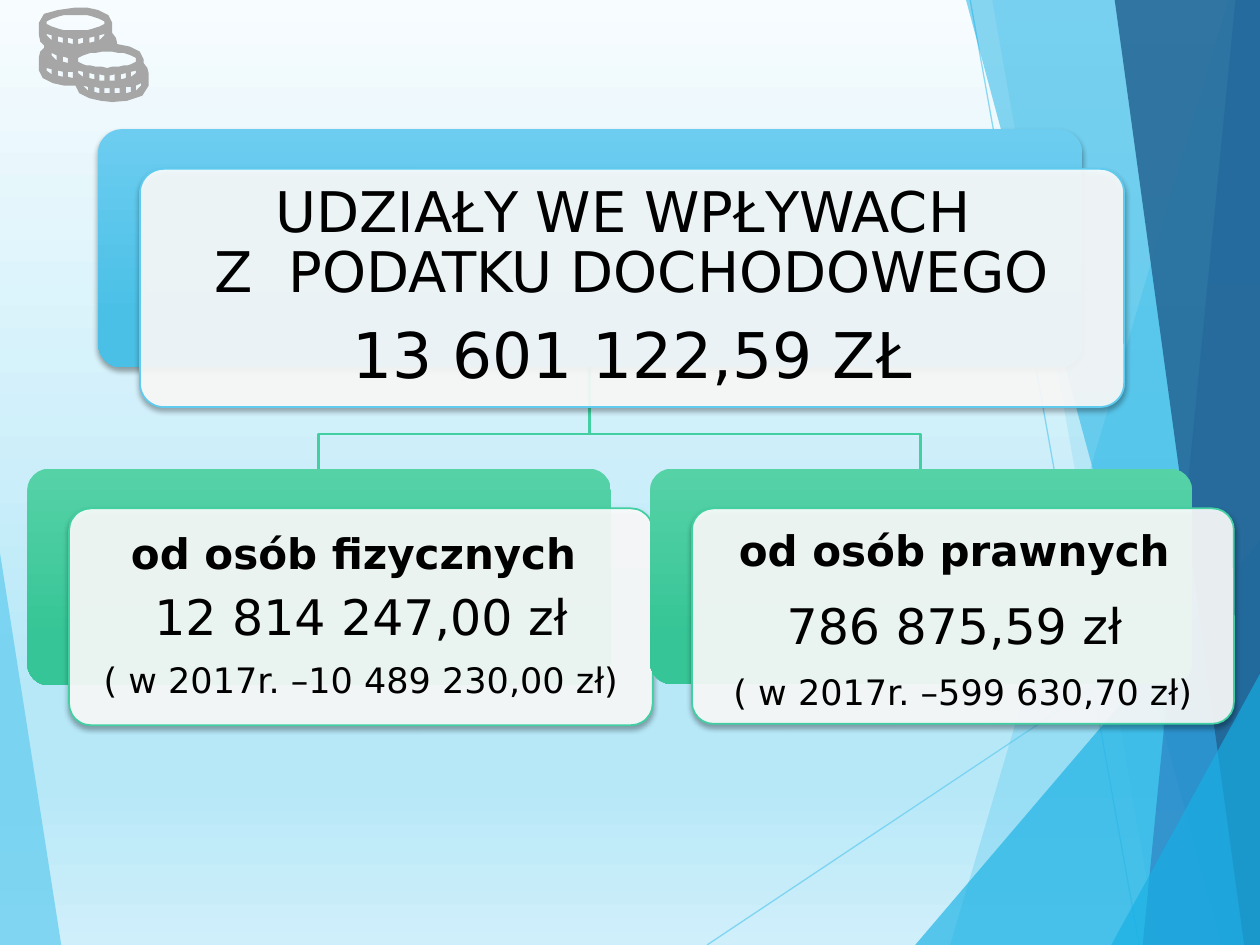
from math import cos, pi, sin

from lxml import etree
from pptx import Presentation
from pptx.dml.color import RGBColor
from pptx.enum.shapes import MSO_CONNECTOR, MSO_SHAPE
from pptx.enum.text import MSO_ANCHOR, MSO_AUTO_SIZE, PP_ALIGN
from pptx.oxml.ns import qn
from pptx.util import Pt

ROUNDED = MSO_SHAPE.ROUNDED_RECTANGLE
STRAIGHT = MSO_CONNECTOR.STRAIGHT
FONT = "DejaVu Sans"
WIDTH, HEIGHT = 720, 540

COLORS = {
    "sky": "5FCBEF", "azure": "17B0E4", "blue": "2E83C3", "navy": "226292",
    "green": "42D0A2", "white": "FFFFFF", "black": "000000", "grey": "A6A6A6",
}
BACKGROUND = [(0, "F7FCFE"), (74, "B7E8F8"), (83, "B7E8F8"), (100, "CFEFFA")]
BLUE_FADE = [(0, "6CCDF0"), (78, "4BC0E6")]
GREEN_FADE = [(0, "56D2A7"), (78, "36C596")]

# Each paragraph is a list of runs: text, size, bold
TOTAL = {
    "box": (56.1, 73.8, 562.4, 136.1), "fade": BLUE_FADE, "edge": "sky", "inset": 9.1,
    "text": [[("UDZIAŁY WE WPŁYWACH \nZ  PODATKU DOCHODOWEGO", 32, False)],
             [("13 601 122,59 ZŁ", 36, False)]],
}
SOURCES = [
    {"box": (15.6, 267.8, 333.5, 123.9), "fade": GREEN_FADE, "edge": "green", "inset": 7.2,
     "text": [[("od osób fizycznych ", 24, True)],
              [("12 814 247,00 zł", 28, False)],
              [("( w 2017r. –10 489 230,00 zł)", 20, False)]]},
    {"box": (371.5, 267.8, 309.7, 123.1), "fade": GREEN_FADE, "edge": "green", "inset": 7.2,
     "text": [[("od osób prawnych", 24, True), (" ", 31, False)],
              [("786 875,59 zł", 28, False), (" ", 31, False)],
              [("( w 2017r. –599 630,70 zł)", 20, False)]]},
]
CARD_SHIFT = (23.9, 22.7)
TEXT_MARGIN = 3.6
BRANCH_RISE = 19.6

RAYS = [((404, 540), (720, 329.4)), ((554.4, 0), (651, 540))]


def panel(top, bottom):
    """Area right of a slanted edge running from slide top to slide bottom."""
    return [(top, 0), (bottom, HEIGHT), (WIDTH, HEIGHT), (WIDTH, 0)]


def wedge(bottom, right):
    """Triangle in the lower right corner of the slide."""
    return [(bottom, HEIGHT), (WIDTH, right), (WIDTH, HEIGHT)]


LEFT_FACET = ([(0, 316), (35.3, HEIGHT), (0, HEIGHT)], "sky", 70)
RIGHT_FACETS = [
    (panel(702, 543), "sky", 36),
    (panel(567.4, 661.7), "sky", 20),
    (wedge(522.7, 309), "azure", 66),
    (panel(552.2, 698.4), "azure", 50),
    (panel(706.3, 653), "blue", 70),
    (panel(637.2, 711.4), "navy", 82),
    (wedge(635, 385.2), "azure", 66),
]

# Coins icon, drawn on a grid of 0.72 pt
COIN_GRID = 0.72
COIN_OUTLINE = [
    (114, 50), (114, 47), (111, 41), (103, 37), (93, 35), (93, 34), (92, 30), (89, 26),
    (89, 18), (86, 12), (78, 8), (69, 6.3), (60, 6), (46, 7.5), (35, 11), (31, 18),
    (31, 28), (32, 33), (35, 36), (35, 38), (32, 41), (31, 45), (31, 56), (34, 62),
    (42, 66), (51, 67.6), (60, 68), (63, 74), (71, 78), (80, 80.4), (89, 81), (101, 80),
    (113, 76), (118, 68), (118, 58), (117, 53.5),
]
COIN_FACES = [(60, 18), (85, 47.3)]
FACE_RADII = (23, 6.2)
NOTCH_WIDTH = 4.2
# left, then heights of top left, top right, bottom right and bottom left
COIN_NOTCHES = [
    (37, 27, 28, 32, 28), (46, 29, 30, 34, 33), (54, 30, 31, 35, 34), (62, 31, 30, 34, 35),
    (71, 30, 29, 33, 34), (79, 28, 27, 28, 32), (41, 42, 44, 48, 44), (50, 45, 46, 50, 49),
    (37, 54, 55, 59, 56), (46, 56, 57, 61, 60), (54, 57, 57, 62, 61), (62, 56, 57, 61, 58),
    (71, 58, 59, 63, 62), (79, 59, 60, 64, 64), (87, 60, 59, 64, 64), (96, 59, 58, 62, 63),
    (104, 57, 56, 58, 61), (66, 68, 69, 72, 68), (75, 69, 70, 74, 73), (83, 70, 70, 74, 74),
    (91, 70, 70, 74, 74), (100, 69, 69, 73, 74), (108, 68, 66, 68, 72),
]


def rgb(name):
    return RGBColor.from_string(COLORS[name])


def add_xml(parent, tag, **attributes):
    values = {key: str(value) for key, value in attributes.items()}
    return etree.SubElement(parent, qn(tag), values)


def set_opacity(shape, percent):
    """Apply opacity to the first solid colour, which is the fill if there is one."""
    color = shape._element.spPr.find(".//" + qn("a:srgbClr"))
    add_xml(color, "a:alpha", val=percent * 1000)


def fade_down(fill, element, stops):
    fill.gradient()
    fill.gradient_angle = 270
    stop_list = element.find(".//" + qn("a:gsLst"))
    for stop in list(stop_list):
        stop_list.remove(stop)
    for position, color in stops:
        add_xml(add_xml(stop_list, "a:gs", pos=position * 1000), "a:srgbClr", val=color)


def add_shadow(shape):
    effects = shape._element.spPr.find(qn("a:effectLst"))
    shadow = add_xml(effects, "a:outerShdw", blurRad=Pt(3), dist=Pt(2), dir=5400000,
                     algn="ctr", rotWithShape=0)
    add_xml(add_xml(shadow, "a:srgbClr", val=COLORS["black"]), "a:alpha", val=35000)


def add_outline(slide, contours, unit=1, close=True):
    builder = None
    for points in contours:
        if builder is None:
            builder = slide.shapes.build_freeform(*points[0], scale=Pt(unit))
        else:
            builder.move_to(*points[0])
        builder.add_line_segments(points[1:], close=close)
    shape = builder.convert_to_shape()
    shape.shadow.inherit = False
    return shape


def add_facet(slide, points, color, opacity):
    facet = add_outline(slide, [points])
    facet.fill.solid()
    facet.fill.fore_color.rgb = rgb(color)
    facet.line.fill.background()
    set_opacity(facet, opacity)


def add_ray(slide, start, end):
    ray = slide.shapes.add_connector(STRAIGHT, *map(Pt, start + end))
    ray.line.color.rgb = rgb("sky")
    ray.line.width = Pt(0.75)
    set_opacity(ray, 70)
    add_xml(ray._element.spPr, "a:effectLst")


def add_branch(slide, parent, child):
    left, top, width, height = parent
    trunk = left + width / 2
    middle = child[0] + child[2] / 2
    bend = child[1] - BRANCH_RISE
    points = [(trunk, top + height), (trunk, bend), (middle, bend), (middle, child[1])]
    branch = add_outline(slide, [points], close=False)
    branch.fill.background()
    branch.line.color.rgb = rgb("green")
    branch.line.width = Pt(1.5)


def add_rounded(slide, box):
    shape = slide.shapes.add_shape(ROUNDED, *map(Pt, box))
    shape.adjustments[0] = 0.1
    shape.shadow.inherit = False
    return shape


def write_text(frame, paragraphs, inset):
    settings = {"word_wrap": True, "auto_size": MSO_AUTO_SIZE.NONE,
                "vertical_anchor": MSO_ANCHOR.MIDDLE}
    settings.update({f"margin_{side}": Pt(inset) for side in ("left", "top", "right", "bottom")})
    for key, value in settings.items():
        setattr(frame, key, value)
    for index, runs in enumerate(paragraphs):
        paragraph = frame.add_paragraph() if index else frame.paragraphs[0]
        paragraph.alignment = PP_ALIGN.CENTER
        paragraph.line_spacing = 0.9
        paragraph.space_before = Pt(0)
        paragraph.space_after = Pt(round(0.35 * max(size for _, size, _ in runs), 2))
        for text, size, bold in runs:
            for number, line in enumerate(text.split("\n")):
                if number:
                    paragraph.add_line_break()
                run = paragraph.add_run()
                run.text = line
                for key, value in {"name": FONT, "size": Pt(size), "bold": bold}.items():
                    setattr(run.font, key, value)
                run.font.color.rgb = rgb("black")


def add_node(slide, node, title=None):
    """Draw a coloured back plate, a pale card and its text, in the title if given."""
    left, top, width, height = node["box"]
    plate = add_rounded(slide, node["box"])
    fade_down(plate.fill, plate._element, node["fade"])
    plate.line.fill.background()
    left, top = left + CARD_SHIFT[0], top + CARD_SHIFT[1]
    card = add_rounded(slide, (left, top, width, height))
    card.fill.solid()
    card.fill.fore_color.rgb = rgb("white")
    set_opacity(card, 90)
    card.line.color.rgb = rgb(node["edge"])
    card.line.width = Pt(1)
    add_shadow(card)
    if title is not None:
        add_shadow(plate)
        slide.shapes._spTree.append(title._element)
    label = title if title is not None else slide.shapes.add_textbox(0, 0, 0, 0)
    place = {"left": left + TEXT_MARGIN, "top": top + TEXT_MARGIN,
             "width": width - 2 * TEXT_MARGIN, "height": height - 2 * TEXT_MARGIN}
    for key, value in place.items():
        setattr(label, key, Pt(value))
    write_text(label.text_frame, node["text"], node["inset"])


def add_coins(slide):
    turns = [2 * pi * step / 32 for step in range(32)]
    faces = [[(x + FACE_RADII[0] * cos(turn), y + FACE_RADII[1] * sin(turn)) for turn in turns]
             for x, y in COIN_FACES]
    notches = [[(x, a), (x + NOTCH_WIDTH, b), (x + NOTCH_WIDTH, c), (x, d)]
               for x, a, b, c, d in COIN_NOTCHES]
    coins = add_outline(slide, [COIN_OUTLINE] + faces + notches, COIN_GRID)
    coins.fill.solid()
    coins.fill.fore_color.rgb = rgb("grey")
    coins.line.fill.background()


def main():
    deck = Presentation()
    deck.slide_width, deck.slide_height = Pt(WIDTH), Pt(HEIGHT)
    slide = deck.slides.add_slide(deck.slide_layouts[5])
    fade_down(slide.background.fill, slide._element, BACKGROUND)
    add_facet(slide, *LEFT_FACET)
    for ray in RAYS:
        add_ray(slide, *ray)
    for facet in RIGHT_FACETS:
        add_facet(slide, *facet)
    for source in reversed(SOURCES):
        add_branch(slide, TOTAL["box"], source["box"])
    add_node(slide, TOTAL, slide.shapes.title)
    for source in SOURCES:
        add_node(slide, source)
    add_coins(slide)
    deck.save("out.pptx")


if __name__ == "__main__":
    main()
